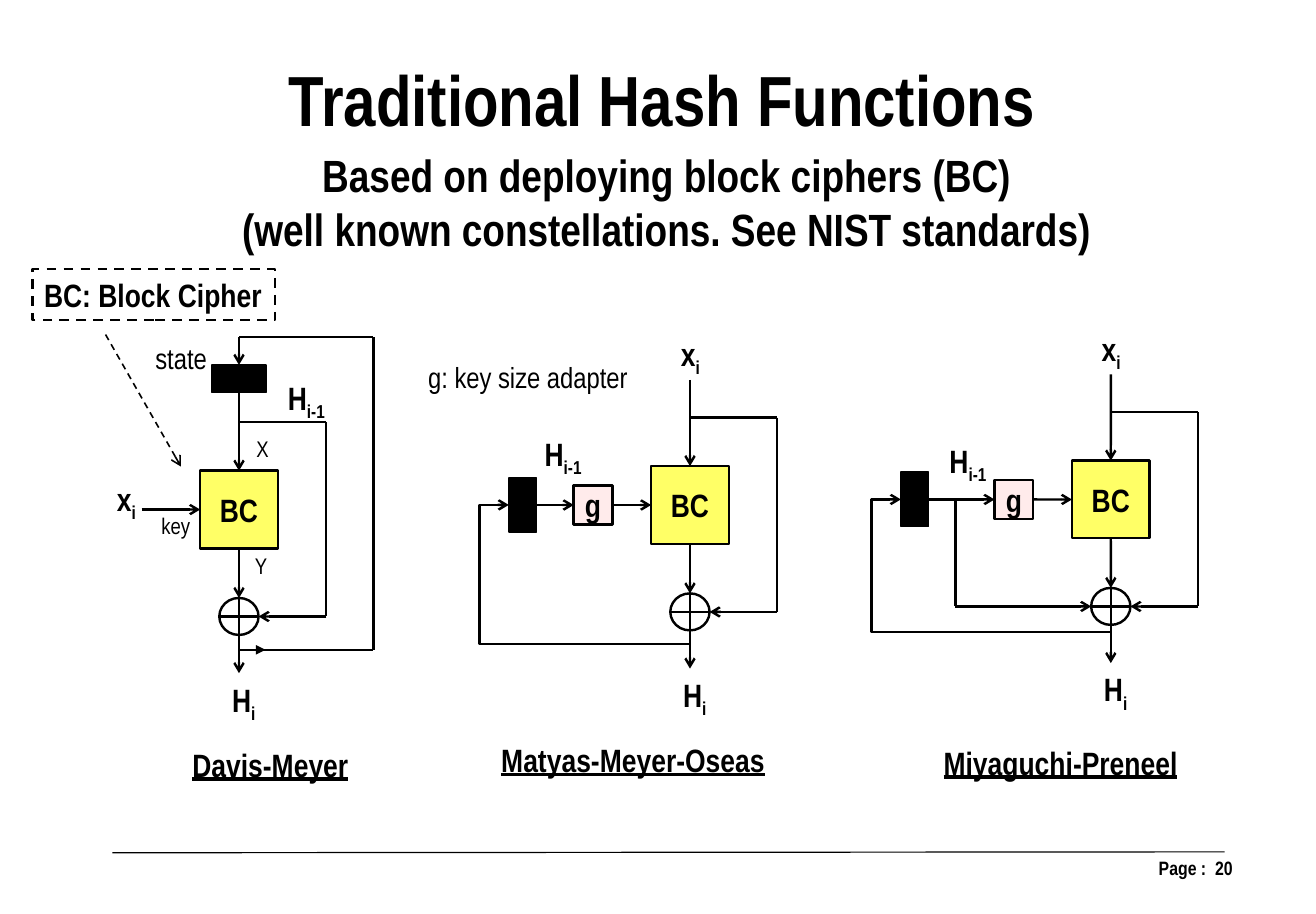
from dataclasses import dataclass
from itertools import pairwise

from lxml import etree
from pptx import Presentation
from pptx import util as u
from pptx.dml import color
from pptx.enum import dml, shapes, text
from pptx.oxml import ns


@dataclass(frozen=True)
class Theme:
    face: str = "Arial Narrow"
    ink: str = "000000"
    block: str = "FFFF66"
    adapt: str = "FFEBEB"
    title: int = 44
    lead: int = 28
    label: int = 20
    note: int = 18
    port: int = 14
    page: int = 12
    wire: float = 1.5
    thin: float = 1
    rule: float = 0.75


T = Theme()
TOP, LEFT, BOTTOM, RIGHT = range(4)
SIDE, SMALL = 1.7, 0.85
RING_W, RING_H, RING_Y = 0.86, 0.81, 2.34
FEED_X, FEED_Y = 1.91, -1.91
STATE_W, STATE_H = 0.61, 1.19
DASH = dml.MSO_LINE.DASH
RECT = shapes.MSO_SHAPE.RECTANGLE
OVAL = shapes.MSO_SHAPE.OVAL


def rgb(code):
    return color.RGBColor.from_string(code)


def apply(item, values):
    for name, value in values.items():
        setattr(item, name, value)


def place(item, left, top, width, height):
    spots = zip(("left", "top", "width", "height"), (left, top, width, height))
    apply(item, {name: u.Cm(value) for name, value in spots})


def write(shape, words, size, align="LEFT", anchor="TOP", grow=True, **extra):
    frame = shape.text_frame
    fit = text.MSO_AUTO_SIZE
    apply(frame, {
        "word_wrap": False,
        "auto_size": fit.SHAPE_TO_FIT_TEXT if grow else fit.NONE,
        "vertical_anchor": getattr(text.MSO_ANCHOR, anchor),
    })
    for row, line in enumerate(words.split("\n")):
        para = frame.add_paragraph() if row else frame.paragraphs[0]
        apply(para, {"alignment": getattr(text.PP_ALIGN, align), "space_before": u.Pt(0)})
        for sub, part in enumerate(line.split("_")):
            run = para.add_run()
            run.text = part
            apply(run.font, {"name": T.face, "size": u.Pt(size), "bold": True, **extra})
            run.font.color.rgb = rgb(T.ink)
            if sub:
                run.font._element.set("baseline", "-25000")


def label(pad, words, left, top, width, height=1.12, size=T.label, **extra):
    box = pad.add_textbox(u.Cm(left), u.Cm(top), u.Cm(width), u.Cm(height))
    write(box, words, size, **extra)


def stroke(item, width, dash=None):
    item.line.color.rgb = rgb(T.ink)
    apply(item.line, {"width": u.Pt(width), "dash_style": dash})


def node(pad, x, y, width, height, fill=None, words="", kind=RECT, line=T.wire):
    shape = pad.add_shape(kind, u.Cm(x - width / 2), u.Cm(y - height / 2),
                          u.Cm(width), u.Cm(height))
    shape.shadow.inherit = False
    if fill:
        shape.fill.solid()
        shape.fill.fore_color.rgb = rgb(fill)
    else:
        shape.fill.background()
    stroke(shape, line)
    if words:
        write(shape, words, T.label, "CENTER", "MIDDLE", False)
    return shape


def link(pad, start, end, tip="arrow", width=T.wire, dash=None, head=None, tail=None,
         bend=None):
    kind = shapes.MSO_CONNECTOR.STRAIGHT if bend is None else shapes.MSO_CONNECTOR.ELBOW
    line = pad.add_connector(kind, *(u.Cm(v) for v in (*start, *end)))
    if head:
        line.begin_connect(*head)
    if tail:
        line.end_connect(*tail)
    stroke(line, width, dash)
    props = line._element.spPr
    if tip:
        etree.SubElement(line.line._get_or_add_ln(), ns.qn("a:tailEnd"), type=tip)
    etree.SubElement(props, ns.qn("a:effectLst"))
    if bend is not None:
        guides = props.find(ns.qn("a:prstGeom")).get_or_add_avLst()
        etree.SubElement(guides, ns.qn("a:gd"), name="adj1", fmla=f"val {round(bend * 100000)}")


def wire(pad, points, tail=None):
    legs = list(pairwise(points))
    for start, end in legs[:-1]:
        link(pad, start, end, None)
    link(pad, *legs[-1], tail=tail)


def core(pad, x, y, source=None):
    block = node(pad, x, y, SIDE, SIDE, T.block, "BC")
    ring = y + RING_Y
    link(pad, (x, y - 2.74), (x, y - SIDE / 2), head=source, tail=(block, TOP))
    link(pad, (x, y + SIDE / 2), (x, ring - RING_H / 2), head=(block, BOTTOM))
    wire(pad, [(x, y + FEED_Y), (x + FEED_X, y + FEED_Y), (x + FEED_X, ring),
               (x + RING_W / 2, ring)])
    node(pad, x, ring, RING_W, RING_H, kind=OVAL)
    link(pad, (x - RING_W / 2, ring), (x + RING_W / 2, ring), None)
    link(pad, (x, ring - RING_H / 2), (x, ring + RING_H / 2), None)
    link(pad, (x, ring + RING_H / 2), (x, y + 3.58))
    label(pad, "H_i", x - 0.4, y + 3.6, 1.04)
    return block


def davis(pad, x, y):
    state = node(pad, x, y - 2.86, STATE_H, STATE_W, T.ink, line=T.thin)
    block = core(pad, x, y, (state, BOTTOM))
    low, high, far = y + 3.07, y - 3.78, x + 2.94
    wire(pad, [(x, low), (far, low), (far, high), (x, high), (x, y - 3.16)], (state, TOP))
    link(pad, (x, low), (x + 0.58, low), "triangle", T.thin)
    link(pad, (3.1, y), (x - SIDE / 2, y), tail=(block, LEFT))
    label(pad, "x_i", 2.31, 10.36, 0.97)
    label(pad, "H_i-1", 6.05, 8.15, 1.4)
    label(pad, "state", 3.15, 7.32, 1.65, 1.02, T.note, bold=False)
    for words, left, top, width in (("X", 5.36, 9.4, 0.79), ("Y", 5.33, 11.96, 0.79),
                                    ("key", 3.28, 11.07, 1.14)):
        label(pad, words, left, top, width, 0.86, T.port, bold=False)


def chain(pad, x, y, reach, drop, prior):
    block = core(pad, x, y)
    left = x - reach
    edge = left - STATE_W / 2
    state = node(pad, left, y, STATE_W, STATE_H, T.ink, line=T.thin)
    adapt = node(pad, x - 2.12, y, SMALL, SMALL, T.adapt, "g")
    link(pad, (left, y), (x - 2.5, y), head=(state, RIGHT), tail=(adapt, LEFT))
    link(pad, (x - 1.7, y), (x - SIDE / 2, y), head=(adapt, RIGHT), tail=(block, LEFT))
    link(pad, (x, y + drop), (edge, y), bend=1 + 0.64 / (x - edge))
    label(pad, "x_i", x - 0.45, y - 3.86, 0.99)
    label(pad, "H_i-1", x + prior[0], y + prior[1], 1.4)


def main():
    deck = Presentation()
    apply(deck, {"slide_width": u.Cm(28.8), "slide_height": u.Cm(20)})
    slide = deck.slides.add_slide(deck.slide_layouts[0])
    pad = slide.shapes
    title, lead = slide.placeholders
    place(title, 6, 1.09, 17, 2.13)
    write(title, "Traditional Hash Functions", T.title, "CENTER", grow=False)
    place(lead, 4.85, 3.1, 19.46, 2.64)
    write(lead, "Based on deploying block ciphers (BC)\n"
                "(well known constellations. See NIST standards)",
          T.lead, "CENTER", grow=False)

    key = node(pad, 3.37, 6.45, 5.31, 1.12)
    stroke(key, T.wire, DASH)
    write(key, "BC: Block Cipher", T.label)
    link(pad, (2.31, 7.32), (3.96, 10.21), width=T.thin, dash=DASH)

    davis(pad, 5.23, 11.15)
    chain(pad, 15.1, 11.05, 3.66, 3.05, (-3.43, -1.68))
    x, y = 24.31, 10.93
    chain(pad, x, y, 4.29, 2.9, (-3.78, -1.4))
    tap, ring = x - 3.4, y + RING_Y
    wire(pad, [(tap, y), (tap, ring), (x - RING_W / 2, ring)])

    label(pad, "g: key size adapter", 9.12, 7.75, 5.05, 1.02, T.note, bold=False)
    for words, left, top, width in (("Davis-Meyer", 3.96, 16.18, 3.96),
                                    ("Matyas-Meyer-Oseas", 10.72, 16.08, 6.32),
                                    ("Miyaguchi-Preneel", 20.4, 16.13, 5.66)):
        label(pad, words, left, top, width, underline=True)

    link(pad, (2.46, 18.66), (26.8, 18.64), None, T.rule)
    label(pad, "Page :  20", 20.68, 18.6, 6.55, 0.8, T.page, align="RIGHT", grow=False)
    deck.save("out.pptx")


if __name__ == "__main__":
    main()
